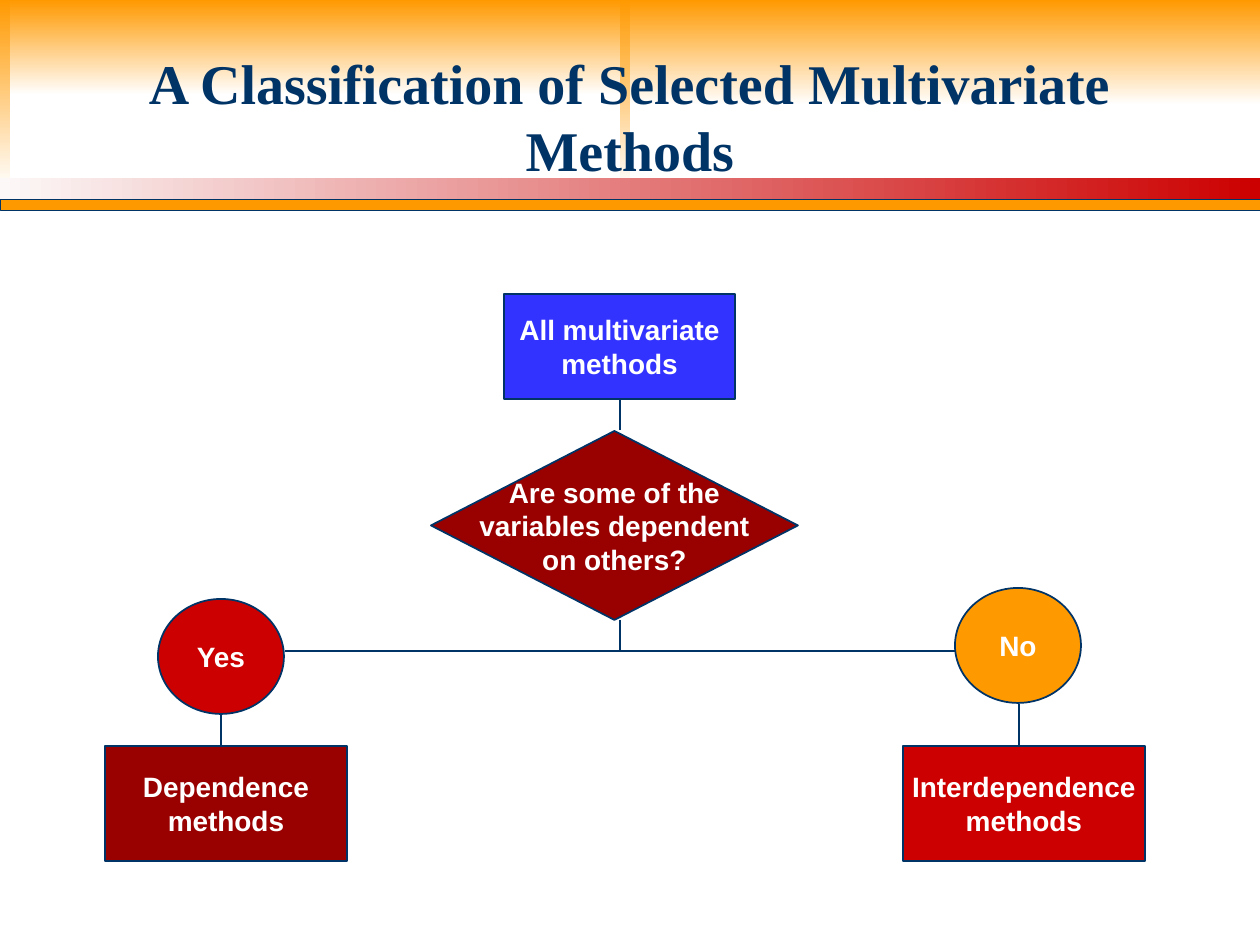
import pptx
import pptx.util
import pptx.dml.color
import pptx.enum.shapes
import pptx.enum.text
import pptx.oxml.ns
import lxml.etree

SHAPE = pptx.enum.shapes.MSO_SHAPE
ANCHOR = pptx.enum.text.MSO_ANCHOR
CENTER = pptx.enum.text.PP_ALIGN.CENTER

PX_PER_INCH = 126
WIDTH, HEIGHT = 1260, 945
NAVY, ORANGE, RED, MAROON, BLUE, WHITE = (
    "003366", "FF9900", "CC0000", "990000", "3333FF", "FFFFFF")

TITLE = "A Classification of Selected Multivariate Methods"
TITLE_BOX = (63, 38, 1134, 130)

DOWN, ACROSS = 270, 0
BANDS = [
    ((0, 0, 620, 95), ORANGE, WHITE, DOWN),
    ((620, 0, 10, 189), ORANGE, WHITE, DOWN),
    ((0, 0, 10, 189), ORANGE, WHITE, DOWN),
    ((0, 178, WIDTH, 21), "FCF8F8", RED, ACROSS),
    ((630, 0, 630, 105), ORANGE, WHITE, DOWN),
]
RULE = (0, 199, WIDTH, 11)

NODES = [
    (SHAPE.RECTANGLE, (504, 294, 231, 105), BLUE, ["All multivariate", "methods"]),
    (SHAPE.DIAMOND, (431, 431, 367, 189), MAROON,
     ["Are some of the", "variables dependent", "on others?"]),
    (SHAPE.OVAL, (158, 599, 126, 115), RED, ["Yes"]),
    (SHAPE.OVAL, (955, 588, 126, 115), ORANGE, ["No"]),
    (SHAPE.RECTANGLE, (105, 746, 242, 115), MAROON, ["Dependence", "methods"]),
    (SHAPE.RECTANGLE, (903, 746, 242, 115), RED, ["Interdependence", "methods"]),
]
LINKS = [
    (620, 399, 620, 430),
    (285, 651, 955, 651),
    (620, 620, 620, 651),
    (221, 714, 221, 746),
    (1019, 704, 1019, 746),
]


def px(length):
    return round(length * 914400 / PX_PER_INCH)


def color(value):
    return pptx.dml.color.RGBColor.from_string(value)


def style_text(frame, size, font, value):
    for para in frame.paragraphs:
        para.alignment = CENTER
        para.font.size = pptx.util.Pt(size)
        para.font.name = font
        para.font.bold = True
        para.font.color.rgb = color(value)


def add_box(slide, kind, place):
    box = slide.shapes.add_shape(kind, *map(px, place))
    box.shadow.inherit = False
    return box


def paint(box, fill, line_width):
    box.fill.solid()
    box.fill.fore_color.rgb = color(fill)
    box.line.color.rgb = color(NAVY)
    box.line.width = pptx.util.Pt(line_width)


def add_band(slide, place, start, end, angle):
    band = add_box(slide, SHAPE.RECTANGLE, place)
    band.line.fill.background()
    band.fill.gradient()
    band.fill.gradient_angle = angle
    for stop, position, value in zip(band.fill.gradient_stops, (0, 1), (start, end)):
        stop.position = position
        stop.color.rgb = color(value)


def add_node(slide, kind, place, fill, lines):
    node = add_box(slide, kind, place)
    paint(node, fill, 1)
    frame = node.text_frame
    frame.word_wrap = False
    frame.vertical_anchor = ANCHOR.MIDDLE
    frame.text = "\n".join(lines)
    style_text(frame, 16, "Arial", WHITE)


def add_link(slide, ends):
    link = slide.shapes.add_connector(
        pptx.enum.shapes.MSO_CONNECTOR.STRAIGHT, *map(px, ends))
    link.line.color.rgb = color(NAVY)
    link.line.width = pptx.util.Pt(1)
    properties = link._element.spPr
    lxml.etree.SubElement(properties, pptx.oxml.ns.qn("a:effectLst"))


def set_title(title):
    title.left, title.top, title.width, title.height = map(px, TITLE_BOX)
    frame = title.text_frame
    frame.text = TITLE
    frame.word_wrap = True
    frame.auto_size = pptx.enum.text.MSO_AUTO_SIZE.NONE
    frame.vertical_anchor = ANCHOR.TOP
    frame.margin_top = px(10)
    frame.margin_bottom = 0
    style_text(frame, 32, "Times New Roman", NAVY)


def main():
    deck = pptx.Presentation()
    deck.slide_width, deck.slide_height = px(WIDTH), px(HEIGHT)
    slide = deck.slides.add_slide(deck.slide_layouts.get_by_name("Title Only"))
    paint(add_box(slide, SHAPE.RECTANGLE, RULE), ORANGE, 0.25)
    for band in BANDS:
        add_band(slide, *band)
    for node in NODES:
        add_node(slide, *node)
    for ends in LINKS:
        add_link(slide, ends)
    title = slide.shapes.title
    set_title(title)
    slide.shapes._spTree.append(title._element)
    deck.save("out.pptx")


if __name__ == "__main__":
    main()
